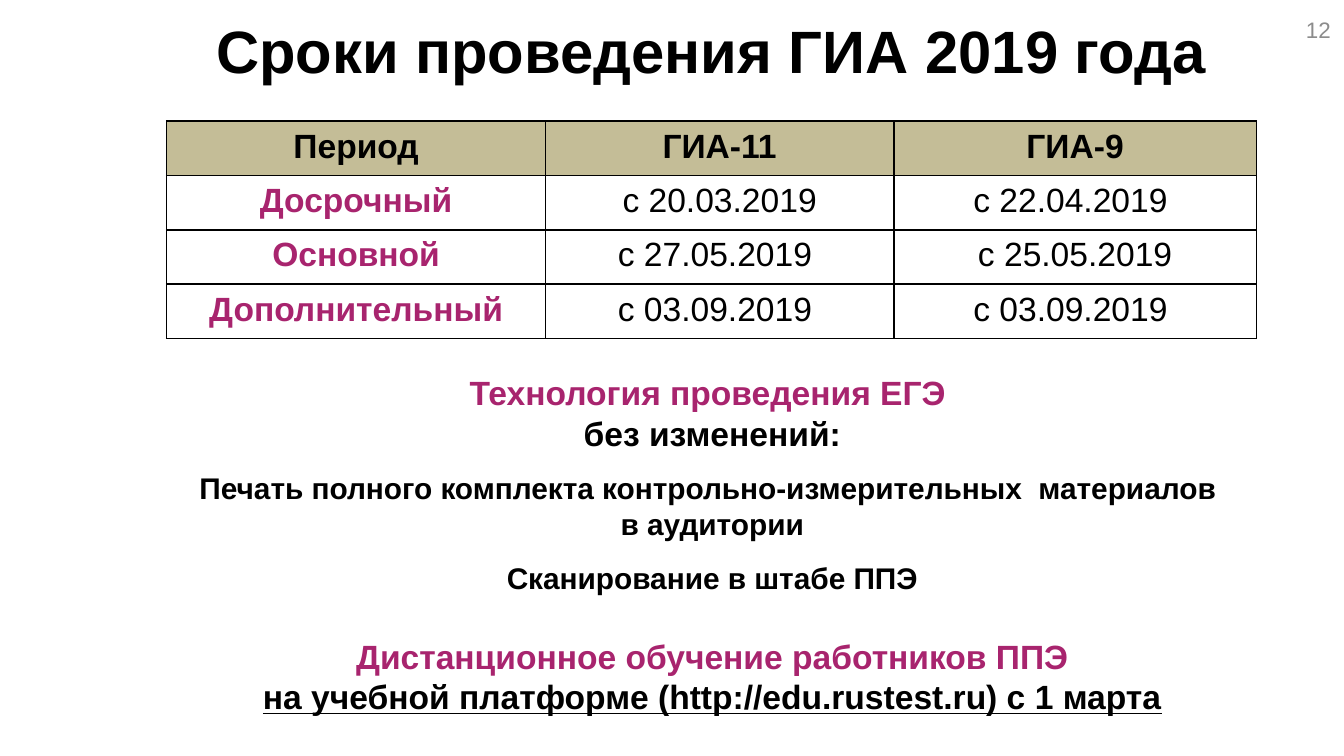
from lxml import etree
from pptx import Presentation
from pptx.dml.color import RGBColor
from pptx.enum.text import MSO_ANCHOR, PP_ALIGN
from pptx.oxml.ns import qn
from pptx.util import Inches, Pt

COLORS = {
    "black": "000000",
    "white": "FFFFFF",
    "accent": "A8246E",
    "header": "C4BD97",
    "number": "8C8C8C",
}


def add_text(paragraph, text, size, color="black", bold=True, underline=None, align=PP_ALIGN.CENTER):
    paragraph.alignment = align
    run = paragraph.add_run()
    run.text = text
    run.font.name = "Arial"
    run.font.size = Pt(size)
    run.font.bold = bold
    run.font.underline = underline
    run.font.color.rgb = RGBColor.from_string(COLORS[color])


def add_borders(cell):
    properties = cell._tc.get_or_add_tcPr()
    for side in ("a:lnL", "a:lnR", "a:lnT", "a:lnB"):
        line = etree.SubElement(properties, qn(side), w=str(Pt(1)))
        fill = etree.SubElement(line, qn("a:solidFill"))
        etree.SubElement(fill, qn("a:srgbClr"), val=COLORS["black"])


presentation = Presentation()
presentation.slide_width = Inches(10)
presentation.slide_height = Inches(10) * 9 // 16
slide = presentation.slides.add_slide(presentation.slide_layouts[5])

title = slide.shapes.title
title.left, title.top = Inches(0.59), Inches(0.05)
title.width, title.height = Inches(9.41), Inches(0.64)
title.text_frame.vertical_anchor = MSO_ANCHOR.TOP
add_text(title.text_frame.paragraphs[0], "Сроки проведения ГИА 2019 года", 32)

schedule = [
    ("Период", "ГИА-11", "ГИА-9"),
    ("Досрочный", "с 20.03.2019", "c 22.04.2019 "),
    ("Основной", "c 27.05.2019 ", "c 25.05.2019"),
    ("Дополнительный", "с 03.09.2019 ", "c 03.09.2019 "),
]
table = slide.shapes.add_table(
    len(schedule), 3, Inches(1.24), Inches(0.9), Inches(8.11), Inches(1.62)
).table
for column, width in zip(table.columns, (2.82, 2.59, 2.7)):
    column.width = Inches(width)
for row_index, row in enumerate(schedule):
    for column_index, text in enumerate(row):
        is_header = row_index == 0
        is_period = column_index == 0 and not is_header
        cell = table.cell(row_index, column_index)
        add_borders(cell)
        cell.fill.solid()
        cell.fill.fore_color.rgb = RGBColor.from_string(COLORS["header" if is_header else "white"])
        add_text(
            cell.text_frame.paragraphs[0], text, 18,
            color="accent" if is_period else "black",
            bold=is_header or is_period,
        )

details = [
    ("Технология проведения ЕГЭ ", 18, "accent", None, 0),
    ("без изменений:", 18, "black", None, 0),
    ("Печать полного комплекта контрольно-измерительных  материалов ", 16, "black", None, 9),
    ("в аудитории", 16, "black", None, 0),
    ("Сканирование в штабе ППЭ", 16, "black", None, 10),
    ("Дистанционное обучение работников ППЭ", 18, "accent", None, 21.5),
    ("на учебной платформе (http://edu.rustest.ru) с 1 марта", 18, "black", True, 0),
]
details_box = slide.shapes.add_textbox(Inches(0.89), Inches(2.72), Inches(8.82), Inches(2.69))
details_frame = details_box.text_frame
details_frame.word_wrap = True
for index, (text, size, color, underline, space) in enumerate(details):
    paragraph = details_frame.add_paragraph() if index else details_frame.paragraphs[0]
    paragraph.space_before = Pt(space)
    add_text(paragraph, text, size, color, underline=underline)

number_box = slide.shapes.add_textbox(Inches(7.67), Inches(0.02), Inches(2.33), Inches(0.4))
number_frame = number_box.text_frame
number_frame.word_wrap = True
number_frame.vertical_anchor = MSO_ANCHOR.MIDDLE
add_text(number_frame.paragraphs[0], "12", 12, "number", bold=False, align=PP_ALIGN.RIGHT)

presentation.save("out.pptx")
